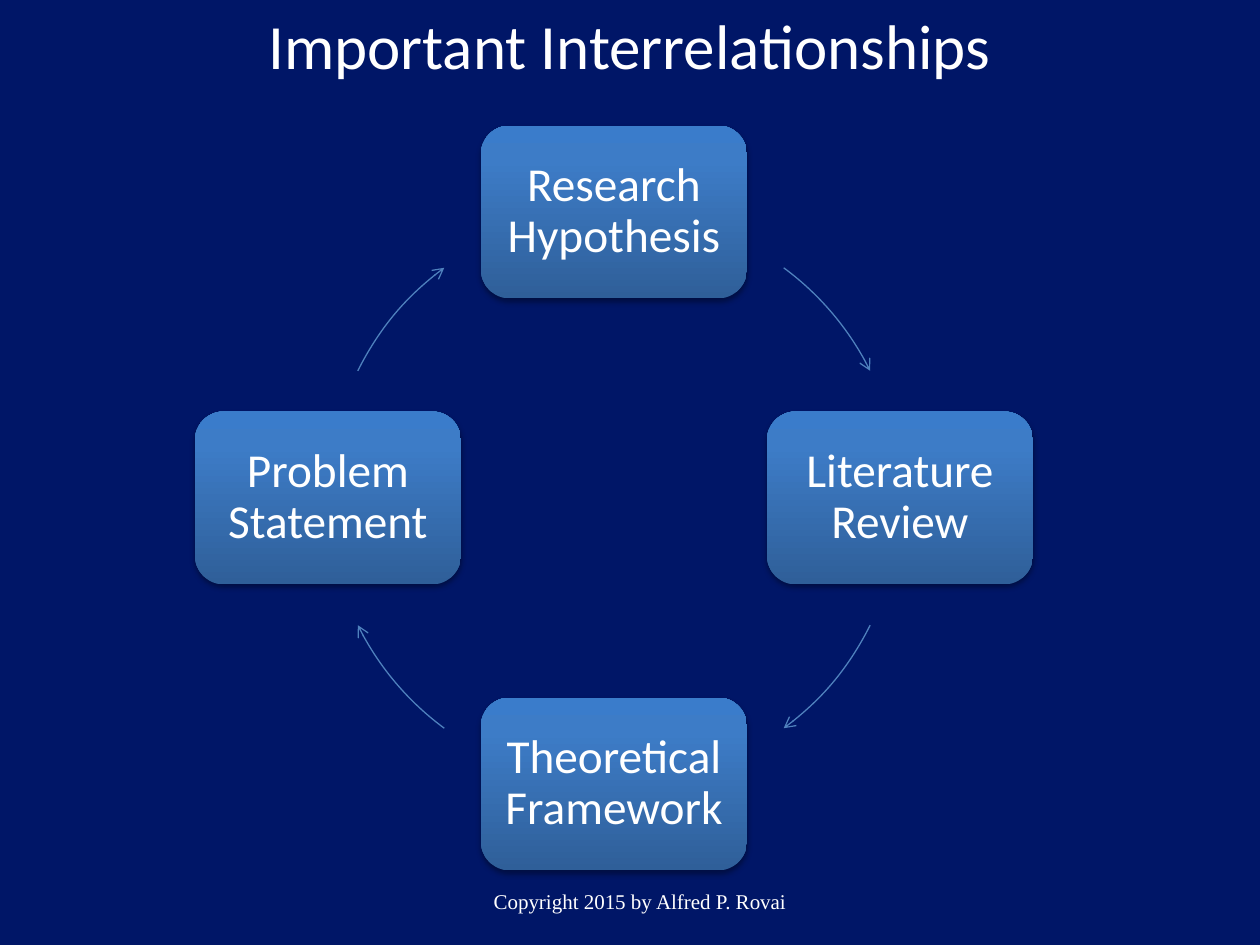
from math import cos, radians, sin

from lxml.etree import SubElement as Sub
from pptx import Presentation
from pptx.dml.color import RGBColor as Rgb
from pptx.enum.shapes import MSO_SHAPE as Kind
from pptx.enum.text import MSO_ANCHOR as Anchor, MSO_AUTO_SIZE as Auto, PP_ALIGN as Align
from pptx.oxml.ns import qn
from pptx.util import Emu, Pt

WIDE, HIGH = 1260, 945
MID_X, MID_Y, RADIUS = 614, 498, 286
BOX_W, BOX_H = 266, 173
SWEEP = 27.2
STEPS = ["Research Hypothesis", "Literature Review",
         "Theoretical Framework", "Problem Statement"]
STARTS = [306.4, 26.4, 126.4, 206.4]  # arc starts, clockwise from 3 o'clock


def px(num):
    return Emu(round(num * 914400 / 126))


def tint(code):
    return Rgb.from_string(code)


class Deck:
    font = "Calibri"
    back, ink, edge = "001667", "FFFFFF", "4F81BD"
    shade = [(0, "2F5F99"), (80, "3D7CC7"), (100, "3A7CCB")]

    def __init__(self):
        self.prs = Presentation()
        self.prs.slide_width, self.prs.slide_height = px(WIDE), px(HIGH)
        self.slide = self.prs.slides.add_slide(self.prs.slide_layouts[5])
        fill = self.slide.background.fill
        fill.solid()
        fill.fore_color.rgb = tint(self.back)

    def label(self, shape, text, size, font=None, anchor=Anchor.MIDDLE):
        frame = shape.text_frame
        frame.text = text
        frame.word_wrap = True
        frame.auto_size = Auto.NONE
        frame.vertical_anchor = anchor
        para = frame.paragraphs[0]
        para.alignment = Align.CENTER
        face = para.runs[0].font
        face.name, face.size = font or self.font, Pt(size)
        face.color.rgb = tint(self.ink)
        return frame

    def title(self, text, x, y, w, h):
        shape = self.slide.shapes.title
        shape.left, shape.top, shape.width, shape.height = map(px, (x, y, w, h))
        self.label(shape, text, 36, anchor=Anchor.TOP)

    def note(self, text, x, y, w, h):
        shape = self.slide.shapes.add_textbox(*map(px, (x, y, w, h)))
        self.label(shape, text, 12, "Times New Roman")

    def plain(self, kind, x, y, w, h):
        """Add a preset shape with no fill and no shadow."""
        shape = self.slide.shapes.add_shape(kind, *map(px, (x, y, w, h)))
        shape.fill.background()
        shape.shadow.inherit = False
        return shape

    def box(self, text, x, y):
        """Add a shaded, rounded box centred on x, y."""
        shape = self.plain(Kind.ROUNDED_RECTANGLE,
                           x - BOX_W / 2, y - BOX_H / 2, BOX_W, BOX_H)
        shape.line.fill.background()
        self.blend(shape)
        self.cast(shape)
        frame = self.label(shape, text, 27)
        frame.paragraphs[0].line_spacing = 0.9
        frame.margin_left = frame.margin_right = px(14)
        frame.margin_top = frame.margin_bottom = px(14)

    def blend(self, shape):
        """Swap the empty fill for a gradient that runs upwards."""
        props = shape._element.spPr
        grad = Sub(props, qn("a:gradFill"), rotWithShape="1")
        props.replace(props.find(qn("a:noFill")), grad)
        stops = Sub(grad, qn("a:gsLst"))
        for pos, code in self.shade:
            stop = Sub(stops, qn("a:gs"), pos=str(pos * 1000))
            Sub(stop, qn("a:srgbClr"), val=code)
        Sub(grad, qn("a:lin"), ang="16200000", scaled="0")

    def cast(self, shape):
        """Drop a soft shadow below the shape."""
        group = shape._element.spPr.find(qn("a:effectLst"))
        drop = Sub(group, qn("a:outerShdw"), blurRad=str(Pt(3.1)),
                   dist=str(Pt(1.8)), dir="5400000", rotWithShape="0")
        color = Sub(drop, qn("a:srgbClr"), val="000000")
        Sub(color, qn("a:alpha"), val="35000")

    def arc(self, start):
        """Draw one arrow along the ring, clockwise from start degrees."""
        shape = self.plain(Kind.ARC, MID_X - RADIUS, MID_Y - RADIUS,
                           2 * RADIUS, 2 * RADIUS)
        # Angles are held in 1/60000 degree, adjustments in 1/100000.
        for i, deg in enumerate((start, start + SWEEP)):
            shape.adjustments[i] = deg * 0.6
        shape.line.color.rgb = tint(self.edge)
        shape.line.width = Pt(0.75)
        Sub(shape.line._get_or_add_ln(), qn("a:tailEnd"), type="arrow")


def main():
    deck = Deck()
    deck.title("Important Interrelationships", 94, 0, 1071, 89)
    for i, (step, start) in enumerate(zip(STEPS, STARTS)):
        turn = radians(90 * i - 90)
        deck.box(step, MID_X + RADIUS * cos(turn), MID_Y + RADIUS * sin(turn))
        deck.arc(start)
    deck.note("Copyright 2015 by Alfred P. Rovai", 220, 876, 840, 50)
    deck.prs.save("out.pptx")


if __name__ == "__main__":
    main()
